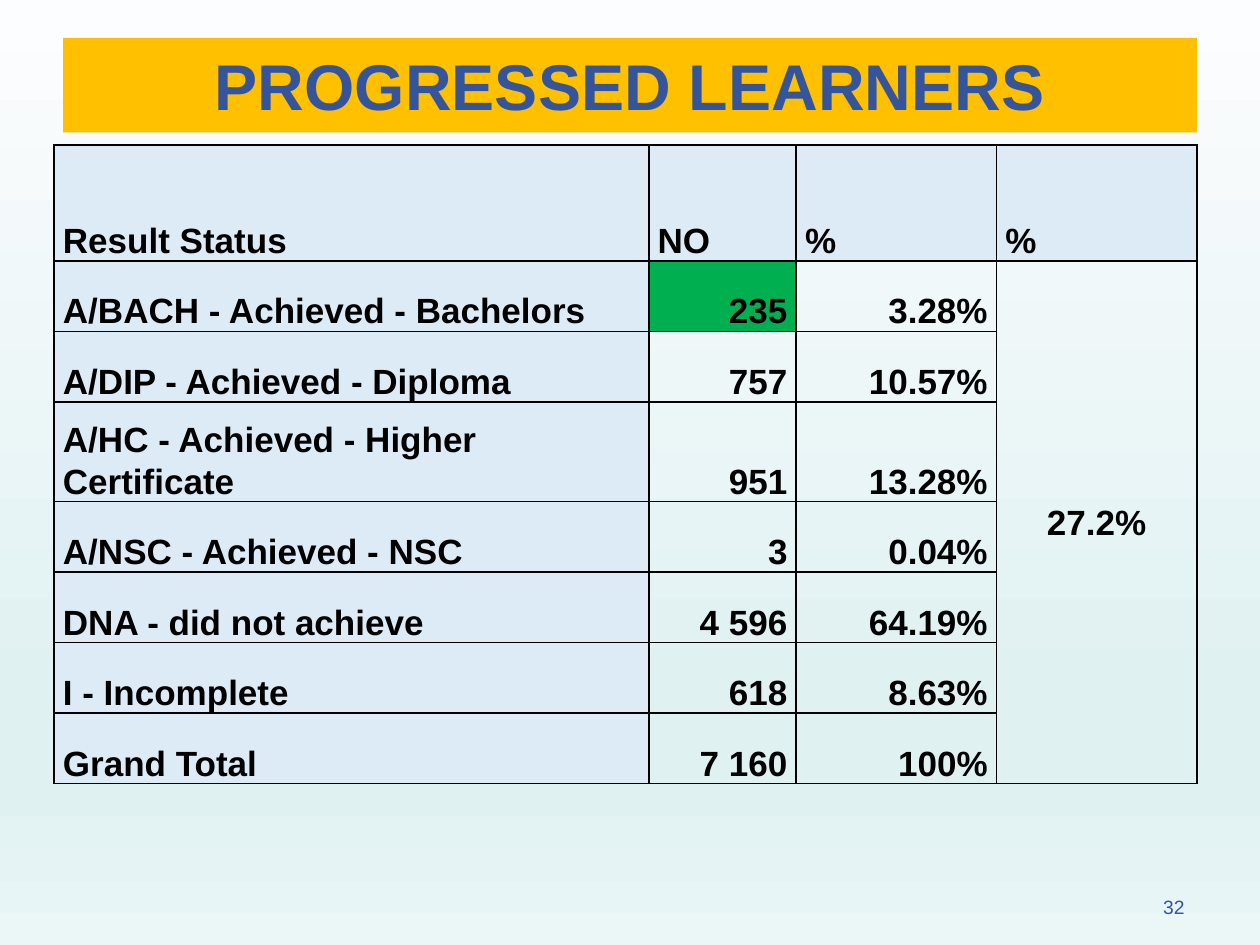
from dataclasses import dataclass

from lxml.etree import SubElement
from pptx import Presentation
from pptx.dml.color import RGBColor
from pptx.enum.text import MSO_ANCHOR, MSO_AUTO_SIZE, PP_ALIGN
from pptx.oxml.ns import qn
from pptx.util import Inches, Pt


@dataclass(frozen=True)
class Theme:
    font: str = "Arial"
    blue: str = "34549C"
    gold: str = "FFC000"
    black: str = "000000"
    label_fill: str = "DDEBF7"
    highlight: str = "00B050"
    backdrop: tuple = ((0, "FCFDFE"), (74, "E0F1F2"), (83, "E0F1F2"), (100, "EBF6F7"))
    title_size: float = 36.9
    table_size: float = 20
    number_size: float = 11


THEME = Theme()
COLUMN_WIDTHS = (4.72, 1.17, 1.59, 1.59)
HEADER_HEIGHT, ROW_HEIGHT, TALL_ROW_HEIGHT = 0.92, 0.56, 0.79
HEADERS = ("Result Status", "NO", "%", "%")
RESULTS = (
    ("A/BACH - Achieved - Bachelors", "235", "3.28%"),
    ("A/DIP - Achieved - Diploma", "757", "10.57%"),
    ("A/HC - Achieved - Higher Certificate", "951", "13.28%"),
    ("A/NSC - Achieved - NSC", "3", "0.04%"),
    ("DNA - did not achieve", "4 596", "64.19%"),
    ("I - Incomplete", "618", "8.63%"),
    ("Grand Total", "7 160", "100%"),
)
TALL_ROW = 3


def write_text(frame, text, size, color=THEME.black, bold=False,
               align=PP_ALIGN.LEFT, line_spacing=None, space_after=None):
    frame.word_wrap = True
    paragraph = frame.paragraphs[0]
    paragraph.alignment = align
    paragraph.line_spacing = line_spacing
    paragraph.space_after = space_after
    run = paragraph.add_run()
    run.text = text
    run.font.name = THEME.font
    run.font.size = Pt(size)
    run.font.bold = bold
    run.font.color.rgb = RGBColor.from_string(color)


def paint_background(slide):
    slide.background.fill.gradient()
    gradient = slide.element.find(".//" + qn("a:gradFill"))
    stops = gradient.find(qn("a:gsLst"))
    for stop in list(stops):
        stops.remove(stop)
    for percent, color in THEME.backdrop:
        stop = SubElement(stops, qn("a:gs"), pos=str(percent * 1000))
        SubElement(stop, qn("a:srgbClr"), val=color)
    gradient.find(qn("a:lin")).set("ang", "5400000")


def add_title(slide, text):
    title = slide.shapes.title
    title.left, title.top = Inches(0.5), Inches(0.3)
    title.width, title.height = Inches(9), Inches(0.75)
    title.fill.solid()
    title.fill.fore_color.rgb = RGBColor.from_string(THEME.gold)
    title.text_frame.auto_size = MSO_AUTO_SIZE.NONE
    title.text_frame.vertical_anchor = MSO_ANCHOR.MIDDLE
    write_text(title.text_frame, text, THEME.title_size, THEME.blue,
               bold=True, align=PP_ALIGN.CENTER)


def add_page_number(slide, number):
    page_number = slide.shapes.add_textbox(Inches(7.17), Inches(7.08), Inches(2.33), Inches(0.27))
    write_text(page_number.text_frame, number, THEME.number_size, THEME.blue,
               align=PP_ALIGN.RIGHT, line_spacing=0.9, space_after=Pt(6))


def add_borders(cell):
    properties = cell._tc.get_or_add_tcPr()
    for side in ("a:lnL", "a:lnR", "a:lnT", "a:lnB"):
        border = SubElement(properties, qn(side), w=str(Pt(1)))
        fill = SubElement(border, qn("a:solidFill"))
        SubElement(fill, qn("a:srgbClr"), val=THEME.black)


def format_cell(cell, fill=None):
    add_borders(cell)
    if fill:
        cell.fill.solid()
        cell.fill.fore_color.rgb = RGBColor.from_string(fill)
    else:
        cell.fill.background()
    cell.margin_left = cell.margin_right = Inches(0.07)
    cell.margin_top = cell.margin_bottom = 0
    cell.vertical_anchor = MSO_ANCHOR.BOTTOM


def write_cell(cell, text, align=PP_ALIGN.LEFT):
    write_text(cell.text_frame, text, THEME.table_size, bold=True,
               align=align, line_spacing=1.07)


def cell_fill(row, column):
    if row == 0 or column == 0:
        return THEME.label_fill
    return THEME.highlight if (row, column) == (1, 1) else None


def add_results_table(slide):
    heights = [HEADER_HEIGHT] + [ROW_HEIGHT] * len(RESULTS)
    heights[TALL_ROW] = TALL_ROW_HEIGHT
    results = slide.shapes.add_table(
        len(heights), len(COLUMN_WIDTHS), Inches(0.43), Inches(1.15),
        Inches(sum(COLUMN_WIDTHS)), Inches(sum(heights))).table
    for column, width in zip(results.columns, COLUMN_WIDTHS):
        column.width = Inches(width)
    for row, height in zip(results.rows, heights):
        row.height = Inches(height)
    for row in range(len(heights)):
        for column in range(len(COLUMN_WIDTHS)):
            format_cell(results.cell(row, column), cell_fill(row, column))
    for row, values in enumerate((HEADERS, *RESULTS)):
        for column, value in enumerate(values):
            align = PP_ALIGN.RIGHT if row and column else PP_ALIGN.LEFT
            write_cell(results.cell(row, column), value, align)
    pass_rate = results.cell(1, 3)
    pass_rate.merge(results.cell(len(RESULTS), 3))
    pass_rate.vertical_anchor = MSO_ANCHOR.MIDDLE
    write_cell(pass_rate, "27.2%", PP_ALIGN.CENTER)


def main():
    presentation = Presentation()
    presentation.slide_width, presentation.slide_height = Inches(10), Inches(7.5)
    slide = presentation.slides.add_slide(presentation.slide_layouts[5])
    paint_background(slide)
    add_title(slide, "PROGRESSED LEARNERS")
    add_page_number(slide, "32")
    add_results_table(slide)
    presentation.save("out.pptx")


if __name__ == "__main__":
    main()
